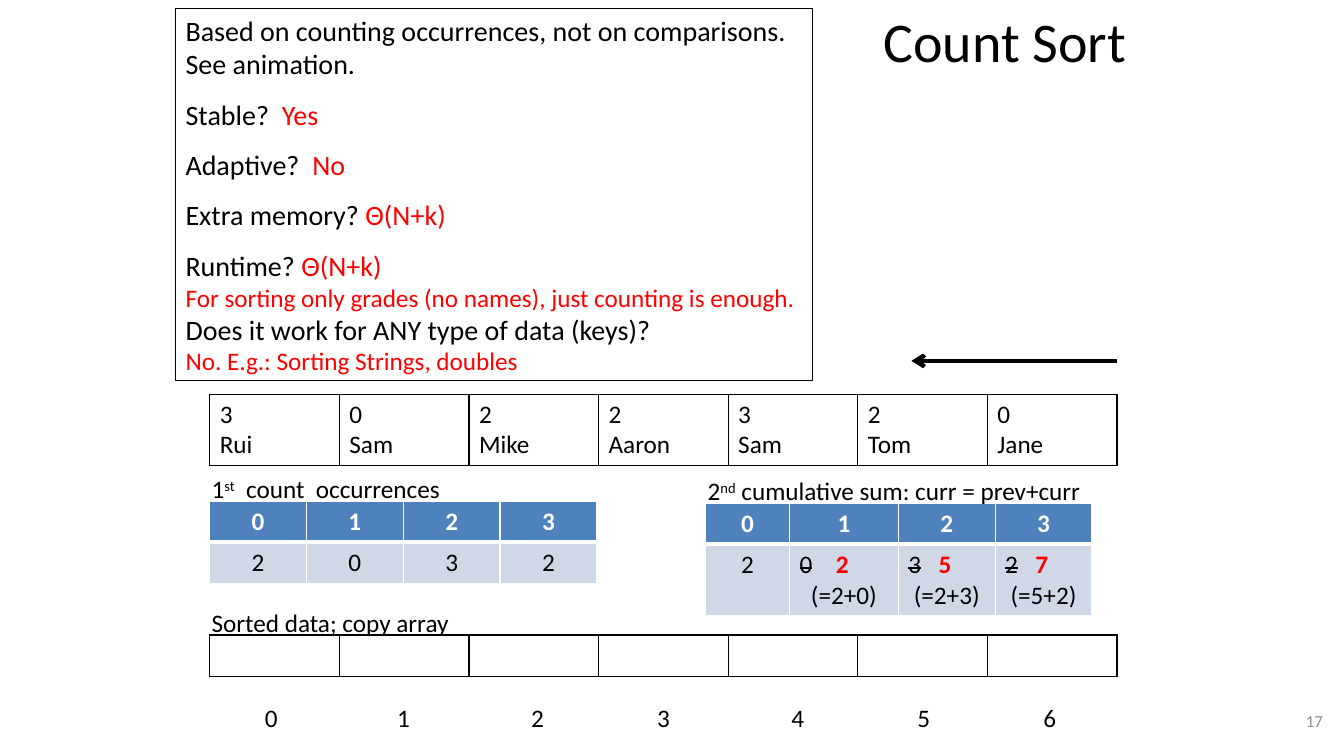
from dataclasses import dataclass

from lxml import etree
from pptx import Presentation
from pptx import util as u
from pptx.dml.color import RGBColor
from pptx.enum import shapes, text
from pptx.oxml import ns

BLACK = RGBColor(0x00, 0x00, 0x00)
WHITE = RGBColor(0xFF, 0xFF, 0xFF)
RED = RGBColor(0xFF, 0x00, 0x00)
GRAY = RGBColor(0x8C, 0x8C, 0x8C)
BLUE = RGBColor(0x4F, 0x81, 0xBD)
PALE = RGBColor(0xD0, 0xD8, 0xE8)
FONT = "Calibri"
LEFT, MID, RIGHT = text.PP_ALIGN.LEFT, text.PP_ALIGN.CENTER, text.PP_ALIGN.RIGHT


@dataclass
class Bit:
    words: str
    hue: RGBColor = BLACK
    size: float = 18
    bold: bool = False
    struck: bool = False
    lift: int = 0


@dataclass
class Line:
    bits: list[Bit]
    align: text.PP_ALIGN = LEFT
    gap: float = 0
    tab: float = 0


@dataclass
class Cell:
    lines: list[Line]
    fill: RGBColor | None = None
    edge: RGBColor = BLACK
    base: float = 1


@dataclass
class Label:
    left: float
    top: float
    width: float
    line: Line
    wrap: bool = False


@dataclass
class Grid:
    left: float
    top: float
    cols: list[float]
    rows: list[float]
    cells: list[list[Cell]]


def add_node(root, tag: str, **attrs: str):
    return etree.SubElement(root, ns.qn(tag), **attrs)


def write(frame, lines: list[Line]) -> None:
    for i, line in enumerate(lines):
        para = frame.paragraphs[0] if i == 0 else frame.add_paragraph()
        para.alignment = line.align
        para.space_before = u.Pt(line.gap)
        if line.tab:
            tabs = add_node(para._p.get_or_add_pPr(), "a:tabLst")
            add_node(tabs, "a:tab", pos=str(u.Inches(line.tab)), algn="l")
        for bit in line.bits:
            run = para.add_run()
            run.text = bit.words
            font = run.font
            font.name, font.size, font.bold = FONT, u.Pt(bit.size), bit.bold
            font.color.rgb = bit.hue
            if bit.struck:
                run._r.get_or_add_rPr().set("strike", "sngStrike")
            if bit.lift:
                run._r.get_or_add_rPr().set("baseline", str(bit.lift * 1000))


def place(shape, left: float, top: float, width: float, height: float) -> None:
    shape.left, shape.top = u.Inches(left), u.Inches(top)
    shape.width, shape.height = u.Inches(width), u.Inches(height)


def add_label(slide, label: Label) -> None:
    box = slide.shapes.add_textbox(u.Inches(label.left), u.Inches(label.top),
                                   u.Inches(label.width), u.Inches(0.4))
    box.text_frame.word_wrap = label.wrap
    if label.wrap:
        box.text_frame.vertical_anchor = text.MSO_ANCHOR.MIDDLE
    write(box.text_frame, [label.line])


def add_grid(slide, grid: Grid) -> None:
    table = slide.shapes.add_table(
        len(grid.rows), len(grid.cols), u.Inches(grid.left), u.Inches(grid.top),
        u.Inches(sum(grid.cols)), u.Inches(sum(grid.rows))).table
    table.first_row = table.horz_banding = False
    for col, width in zip(table.columns, grid.cols):
        col.width = u.Inches(width)
    for row, height, cells in zip(table.rows, grid.rows, grid.cells):
        row.height = u.Inches(height)
        for spot, cell in zip(row.cells, cells):
            props = spot._tc.get_or_add_tcPr()
            for side in "LRTB":
                width = cell.base if side == "B" else 1
                edge = add_node(props, f"a:ln{side}", w=str(u.Pt(width)))
                paint = add_node(edge, "a:solidFill")
                add_node(paint, "a:srgbClr", val=str(cell.edge))
            if cell.fill is None:
                spot.fill.background()
            else:
                spot.fill.solid()
                spot.fill.fore_color.rgb = cell.fill
            write(spot.text_frame, cell.lines)


def head(word: str) -> Cell:
    return Cell([Line([Bit(word, WHITE, bold=True)], MID)], BLUE, WHITE, 3)


def count(word: str) -> Cell:
    return Cell([Line([Bit(word)], MID)], PALE, WHITE)


def total(old: str, new: str, sum_text: str, tab: float) -> Cell:
    bits = [Bit(old, struck=True), Bit("\t"), Bit(new, RED, bold=True)]
    return Cell([Line(bits, tab=tab), Line([Bit(sum_text)], MID)], PALE, WHITE)


def fact(ask: str, reply: str) -> Line:
    return Line([Bit(ask, size=20), Bit(reply, RED, 20)], gap=12)


FACTS = [
    Line([Bit("Based on counting occurrences, not on comparisons.", size=20)]),
    Line([Bit("See animation.", size=20)]),
    fact("Stable?  ", "Yes"),
    fact("Adaptive?  ", "No"),
    fact("Extra memory? ", "Θ(N+k)"),
    fact("Runtime? ", "Θ(N+k)"),
    Line([Bit("For sorting only grades (no names), just counting is enough.", RED)]),
    Line([Bit("Does it work for ANY type of data (keys)?", size=20)]),
    Line([Bit("No. E.g.: Sorting Strings, doubles", RED)]),
]
PEOPLE = [("3", "Rui"), ("0", "Sam"), ("2", "Mike"), ("2", "Aaron"),
          ("3", "Sam"), ("2", "Tom"), ("0", "Jane")]
SLOTS = [9 / len(PEOPLE)] * len(PEOPLE)
HEADS = [head(key) for key in "0123"]
GRIDS = [
    Grid(2.08, 3.91, SLOTS, [0.7],
         [[Cell([Line([Bit(word)]) for word in pair]) for pair in PEOPLE]]),
    Grid(2.08, 4.97, [0.96] * 4, [0.41] * 2, [HEADS, [count(n) for n in "2032"]]),
    Grid(2.08, 6.3, SLOTS, [0.41], [[Cell([]) for _ in SLOTS]]),
    Grid(7, 4.99, [0.83, 1.08, 0.96, 0.96], [0.41, 0.7],
         [HEADS, [count("2"), total("0", "2", "(=2+0)", 0.36),
                  total("3", "5", "(=2+3)", 0.3), total("2", "7", "(=5+2)", 0.3)]]),
]
MARKS = [2.53, 3.84, 5.17, 6.42, 7.75, 9, 10.25]
LABELS = [
    Label(2, 4.65, 2.51, Line([Bit("1"), Bit("st", lift=30), Bit("  count  occurrences")])),
    Label(2, 5.98, 2.58, Line([Bit("Sorted data; copy array")])),
    Label(6.92, 4.67, 3.97, Line([Bit("2"), Bit("nd", lift=30),
                                  Bit(" cumulative sum: curr = prev+curr")])),
    Label(10.11, 6.95, 3.11, Line([Bit("17", GRAY, 12)], RIGHT), True),
    *(Label(left, 6.92, 0.33, Line([Bit(str(i))])) for i, left in enumerate(MARKS)),
]


def main() -> None:
    deck = Presentation()
    deck.slide_width, deck.slide_height = u.Inches(13.33), u.Inches(7.5)
    slide = deck.slides.add_slide(deck.slide_layouts[1])

    title = slide.shapes.title
    place(title, 8.25, 0.06, 3.43, 0.67)
    title.text_frame.auto_size = text.MSO_AUTO_SIZE.NONE
    write(title.text_frame, [Line([Bit("Count Sort", size=40)], MID)])

    body = slide.placeholders[1]
    place(body, 1.74, 0.08, 6.32, 3.7)
    body.line.color.rgb = BLACK
    body.line.width = u.Pt(0.75)
    body.text_frame.auto_size = text.MSO_AUTO_SIZE.NONE
    body.text_frame.word_wrap = False
    write(body.text_frame, FACTS)
    for para in body.text_frame.paragraphs:
        props = para._p.get_or_add_pPr()
        props.set("marL", "0")
        props.set("indent", "0")
        add_node(props, "a:buNone")

    for grid in GRIDS:
        add_grid(slide, grid)
    for label in LABELS:
        add_label(slide, label)

    arrow = slide.shapes.add_connector(shapes.MSO_CONNECTOR.STRAIGHT, u.Inches(11.08),
                                       u.Inches(3.58), u.Inches(9.04), u.Inches(3.58))
    arrow.line.color.rgb = BLACK
    arrow.line.width = u.Pt(3)
    add_node(arrow.line._get_or_add_ln(), "a:tailEnd", type="arrow")
    add_node(arrow._element.spPr, "a:effectLst")
    deck.save("out.pptx")


if __name__ == "__main__":
    main()
